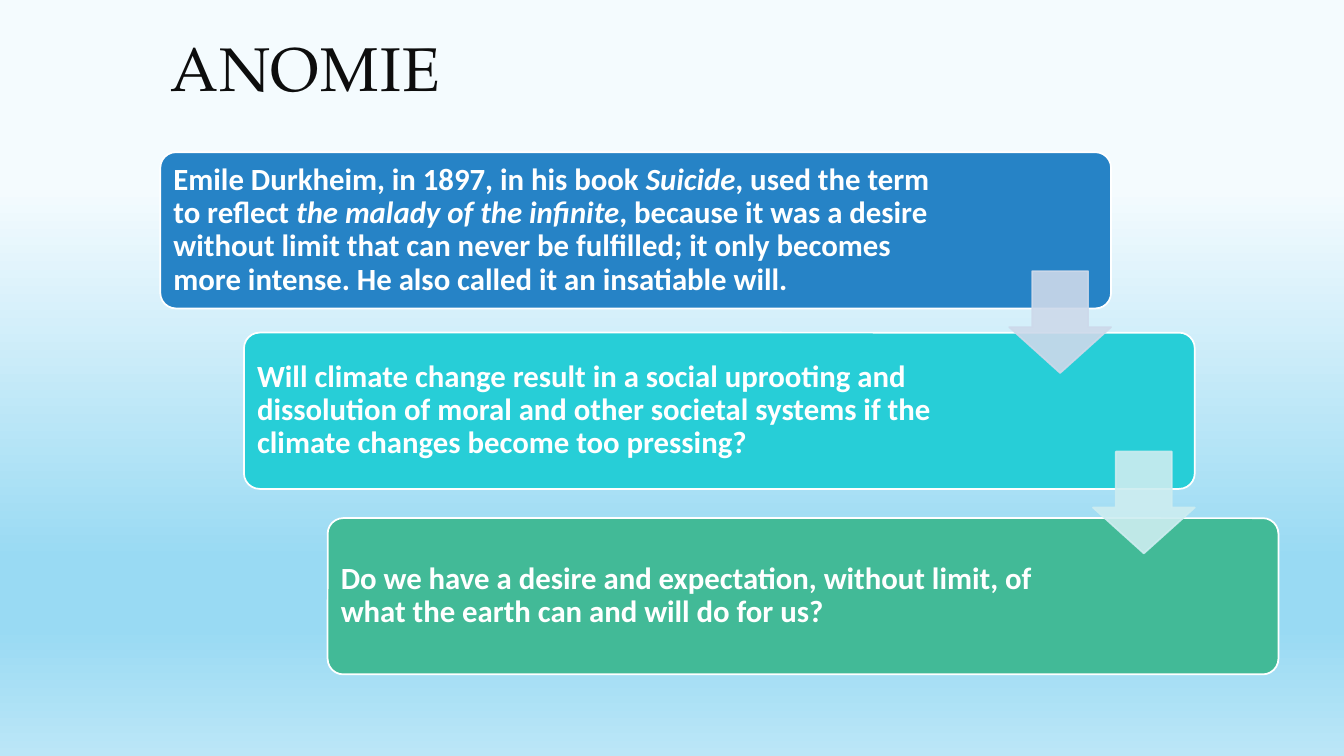
"""Build the Anomie slide: three stepped panels joined by down arrows."""
from lxml import etree
from pptx import Presentation
from pptx.dml.color import RGBColor
from pptx.enum.shapes import MSO_SHAPE
from pptx.enum.text import MSO_ANCHOR, MSO_AUTO_SIZE, PP_ALIGN
from pptx.oxml.ns import qn
from pptx.util import Inches, Pt

ROUNDED, DOWN_ARROW = MSO_SHAPE.ROUNDED_RECTANGLE, MSO_SHAPE.DOWN_ARROW
MIDDLE, LEFT, NO_FIT = MSO_ANCHOR.MIDDLE, PP_ALIGN.LEFT, MSO_AUTO_SIZE.NONE

TITLE = "ANOMIE"
SKY = [(25, "F4FBFE"), (74, "99DAF3"), (83, "99DAF3"), (100, "BBE6F7")]
PANELS = [
    (1.51, 7.75, "2683C6", [
        ("Emile Durkheim, in 1897, in his book ", False),
        ("Suicide", True),
        (", used the term to reflect ", False),
        ("the malady of the infinite", True),
        (", because it was a desire without limit that can never be fulfilled; "
         "it only becomes more intense. He also called it an insatiable will.", False),
    ]),
    (3.3, 7.5, "27CED7", [
        ("Will climate change result in a social uprooting and dissolution of moral "
         "and other societal systems if the climate changes become too pressing?", False),
    ]),
    (5.14, 7.5, "42BA97", [
        ("Do we have a desire and expectation, without limit, of what the earth "
         "can and will do for us?", False),
    ]),
]
ARROW_COLORS = ["CDD9EA", "CDEDF0"]

FIRST_LEFT, STEP = 1.59, 0.83
PANEL_W, PANEL_H = 9.43, 1.55
TEXT_INSET, MARGIN = 0.04, 0.09
ARROW_SIZE, ARROW_DROP = 1.01, 1.18


def rgb(value):
    return RGBColor.from_string(value)


def paint_sky(slide):
    fill = slide.background.fill
    fill.gradient()
    fill.gradient_angle = 270
    stops = next(slide.element.iter(qn("a:gsLst")))
    for stop in list(stops):
        stops.remove(stop)
    for position, color in SKY:
        stop = etree.SubElement(stops, qn("a:gs"), pos=str(position * 1000))
        etree.SubElement(stop, qn("a:srgbClr"), val=color)


def add_block(slide, kind, box, fill, line, adjustments):
    block = slide.shapes.add_shape(kind, *map(Inches, box))
    block.shadow.inherit = False
    for index, value in enumerate(adjustments):
        block.adjustments[index] = value
    block.fill.solid()
    block.fill.fore_color.rgb = rgb(fill)
    block.line.color.rgb = rgb(line)
    block.line.width = Pt(1.25)
    return block


def add_statement(slide, box, runs):
    frame = slide.shapes.add_textbox(*map(Inches, box)).text_frame
    frame.word_wrap = True
    frame.vertical_anchor = MIDDLE
    frame.margin_left = frame.margin_right = Inches(MARGIN)
    frame.margin_top = frame.margin_bottom = Inches(MARGIN)
    paragraph = frame.paragraphs[0]
    paragraph.line_spacing = 0.9
    for words, italic in runs:
        run = paragraph.add_run()
        run.text = words
        run.font.name, run.font.size = "Calibri", Pt(22)
        run.font.bold, run.font.italic = True, italic
        run.font.color.rgb = rgb("FFFFFF")


def add_title(slide):
    title = slide.shapes.title
    title.left, title.top = Inches(FIRST_LEFT), Inches(0.32)
    title.width, title.height = Inches(10.5), Inches(0.82)
    frame = title.text_frame
    frame.auto_size = NO_FIT
    frame.vertical_anchor = MIDDLE
    paragraph = frame.paragraphs[0]
    paragraph.alignment = LEFT
    paragraph.line_spacing = 0.8
    run = paragraph.add_run()
    run.text = TITLE
    run.font.name, run.font.size = "TeX Gyre Pagella", Pt(44)
    run.font.color.rgb = rgb("0D0D0D")
    run.font._element.set("spc", "100")


def main():
    deck = Presentation()
    deck.slide_width, deck.slide_height = Inches(13.33), Inches(7.5)
    slide = deck.slides.add_slide(deck.slide_layouts[5])
    paint_sky(slide)
    add_title(slide)

    for index, (top, text_width, color, runs) in enumerate(PANELS):
        left = FIRST_LEFT + index * STEP
        add_block(slide, ROUNDED, (left, top, PANEL_W, PANEL_H), color, "FFFFFF", [0.1])
        add_statement(slide, (left + TEXT_INSET, top + TEXT_INSET, text_width,
                              PANEL_H - 2 * TEXT_INSET), runs)

    for index, (panel, color) in enumerate(zip(PANELS, ARROW_COLORS)):
        left = FIRST_LEFT + index * STEP + PANEL_W - ARROW_SIZE
        box = (left, panel[0] + ARROW_DROP, ARROW_SIZE, ARROW_SIZE)
        arrow = add_block(slide, DOWN_ARROW, box, color, color, [0.55, 0.45])
        for tint in arrow._element.spPr.iter(qn("a:srgbClr")):
            etree.SubElement(tint, qn("a:alpha"), val="90000")

    deck.save("out.pptx")


if __name__ == "__main__":
    main()
